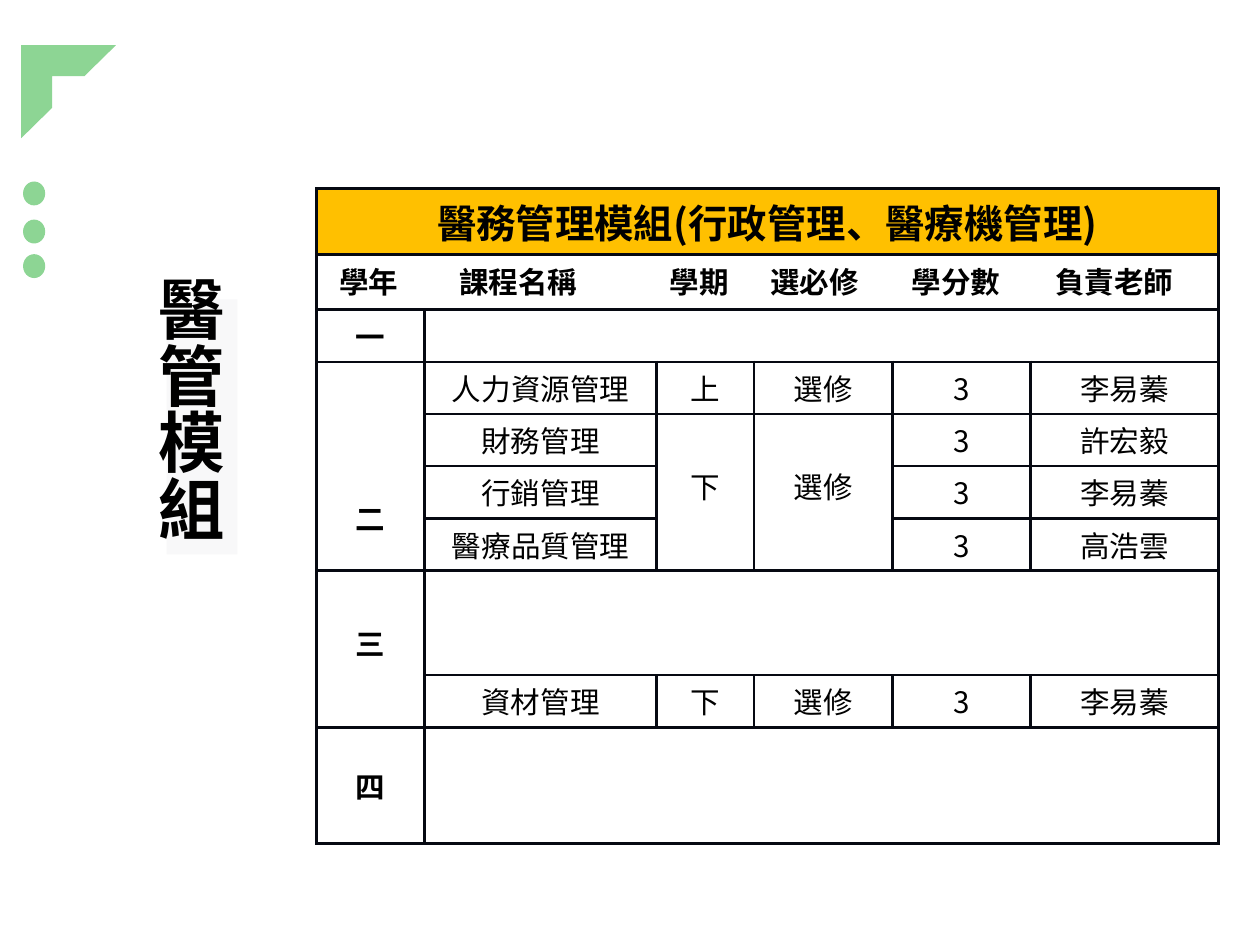
"""Build the health management course module slide."""
from lxml import etree
from pptx import Presentation
from pptx import util as u
from pptx.dml.color import RGBColor
from pptx.enum import shapes, text
from pptx.oxml import ns

W, H = u.Inches(14.22), u.Inches(10.67)
FONT = "Noto Sans CJK SC"
GREEN, GOLD, PALE, BLACK, BORDER = "8DD594", "FFC000", "F8F8F9", "000000", "060912"
COLS = (1.22, 2.62, 1.1, 1.56, 1.56, 2.12)
ROWS = (0.71, 0.62, 0.59, 0.59, 0.59, 0.59, 0.59, 1.18, 0.59, 1.31)
HEADINGS = ("學年", "課程名稱", "學期", "選必修", "學分數", "負責老師")
TABS = (0.16, 1.51, 3.89, 5.02, 6.62, 8.24)
YEARS = {2: "一", 3: "二", 7: "三", 9: "四"}
COURSES = {
    3: ("人力資源管理", "上", "選修", "3", "李易蓁"),
    4: ("財務管理", "下", "選修", "3", "許宏毅"),
    5: ("行銷管理", "", "", "3", "李易蓁"),
    6: ("醫療品質管理", "", "", "3", "高浩雲"),
    8: ("資材管理", "下", "選修", "3", "李易蓁"),
}
MERGES = ((0, 0, 0, 5), (1, 0, 1, 5), (2, 1, 2, 5), (3, 0, 6, 0), (4, 2, 6, 2),
          (4, 3, 6, 3), (7, 0, 8, 0), (7, 1, 7, 5), (9, 1, 9, 5))


def area(x, y, w, h):
    """Turn percentages of the slide into a position and size."""
    return [int(share * side / 100) for share, side in zip((x, y, w, h), (W, H, W, H))]


def paint(fill, color):
    """Make a fill solid in a hex colour."""
    fill.solid()
    fill.fore_color.rgb = RGBColor.from_string(color)


def add_text(p, words, size, bold=False, align=text.PP_ALIGN.CENTER):
    """Add one formatted run to a paragraph."""
    p.alignment = align
    r = p.add_run()
    r.text = words
    r.font.size, r.font.bold, r.font.name = u.Pt(size), bold, FONT
    r.font.color.rgb = RGBColor.from_string(BLACK)
    etree.SubElement(r.font._element, ns.qn("a:ea"), typeface=FONT)


def add_block(s, kind, place, color):
    """Add a flat shape without an outline."""
    sp = s.shapes.add_shape(kind, *area(*place))
    sp.shadow.inherit = False
    paint(sp.fill, color)
    sp.line.fill.background()


def set_borders(cell):
    """Draw the four borders of a cell."""
    tc_pr = cell._tc.get_or_add_tcPr()
    for side in ("lnL", "lnR", "lnT", "lnB"):
        ln = etree.SubElement(tc_pr, ns.qn(f"a:{side}"), w=str(u.Pt(2.25)))
        fill = etree.SubElement(ln, ns.qn("a:solidFill"))
        etree.SubElement(fill, ns.qn("a:srgbClr"), val=BORDER)


def add_headings(p):
    """Write the column headings at tab stops."""
    tabs = etree.SubElement(p._p.get_or_add_pPr(), ns.qn("a:tabLst"))
    for stop in TABS:
        etree.SubElement(tabs, ns.qn("a:tab"), pos=str(u.Inches(stop)), algn="l")
    add_text(p, "".join("\t" + name for name in HEADINGS), 24, True, text.PP_ALIGN.LEFT)


def add_grid(s, place):
    """Add the bordered table with its merged cells."""
    x, y, w, h = area(*place)
    table = s.shapes.add_table(len(ROWS), len(COLS), x, y, w, h).table
    table.first_row = table.horz_banding = False
    for column, share in zip(table.columns, COLS):
        column.width = int(w * share / sum(COLS))
    for row, share in zip(table.rows, ROWS):
        row.height = int(h * share / sum(ROWS))
    for cell in table.iter_cells():
        set_borders(cell)
        cell.fill.background()
    for top, left, bottom, right in MERGES:
        table.cell(top, left).merge(table.cell(bottom, right))
    return table


def fill_grid(table):
    """Write the table title, headings, years and courses."""
    paint(table.cell(0, 0).fill, GOLD)
    add_text(table.cell(0, 0).text_frame.paragraphs[0], "醫務管理模組(行政管理、醫療機管理)", 32, True)
    add_headings(table.cell(1, 0).text_frame.paragraphs[0])
    for row, year in YEARS.items():
        add_text(table.cell(row, 0).text_frame.paragraphs[0], year, 24, True)
    for row, course in COURSES.items():
        for col, words in enumerate(course, 1):
            if words:
                add_text(table.cell(row, col).text_frame.paragraphs[0], words, 24)
    for row, col in ((4, 2), (4, 3), (7, 0), (9, 0)):
        cell = table.cell(row, col)
        cell.vertical_anchor = text.MSO_ANCHOR.MIDDLE
        if cell.is_merge_origin:
            cell.margin_bottom = u.Inches(0.2)
    second_year = table.cell(3, 0)
    second_year.vertical_anchor = text.MSO_ANCHOR.BOTTOM
    second_year.margin_bottom = u.Inches(0.36)


def add_title(s, words, place):
    """Set the title placeholder vertically in front of the other shapes."""
    sp = s.shapes.title
    sp.left, sp.top, sp.width, sp.height = area(*place)
    tf = sp.text_frame
    tf.word_wrap, tf.auto_size = True, text.MSO_AUTO_SIZE.NONE
    tf.vertical_anchor = text.MSO_ANCHOR.MIDDLE
    tf._txBody.bodyPr.set("vert", "eaVert")
    p = tf.paragraphs[0]
    p.line_spacing = 1.0
    add_text(p, words, 54, True)
    s.shapes._spTree.append(sp._element)


def main():
    """Build and save the slide."""
    prs = Presentation()
    prs.slide_width, prs.slide_height = W, H
    s = prs.slides.add_slide(prs.slide_layouts[5])
    fill_grid(add_grid(s, (25.11, 19.96, 71.6, 68.98)))
    kinds = shapes.MSO_SHAPE
    add_block(s, kinds.HALF_FRAME, (1.69, 4.78, 7.52, 9.84), GREEN)
    for y in (19.21, 23.24, 26.9):
        add_block(s, kinds.OVAL, (1.83, y, 1.76, 2.53), GREEN)
    add_block(s, kinds.RECTANGLE, (13.22, 31.68, 5.63, 26.99), PALE)
    add_title(s, "醫管模組", (10.48, 28.77, 9.07, 30))
    prs.save("out.pptx")


if __name__ == "__main__":
    main()
